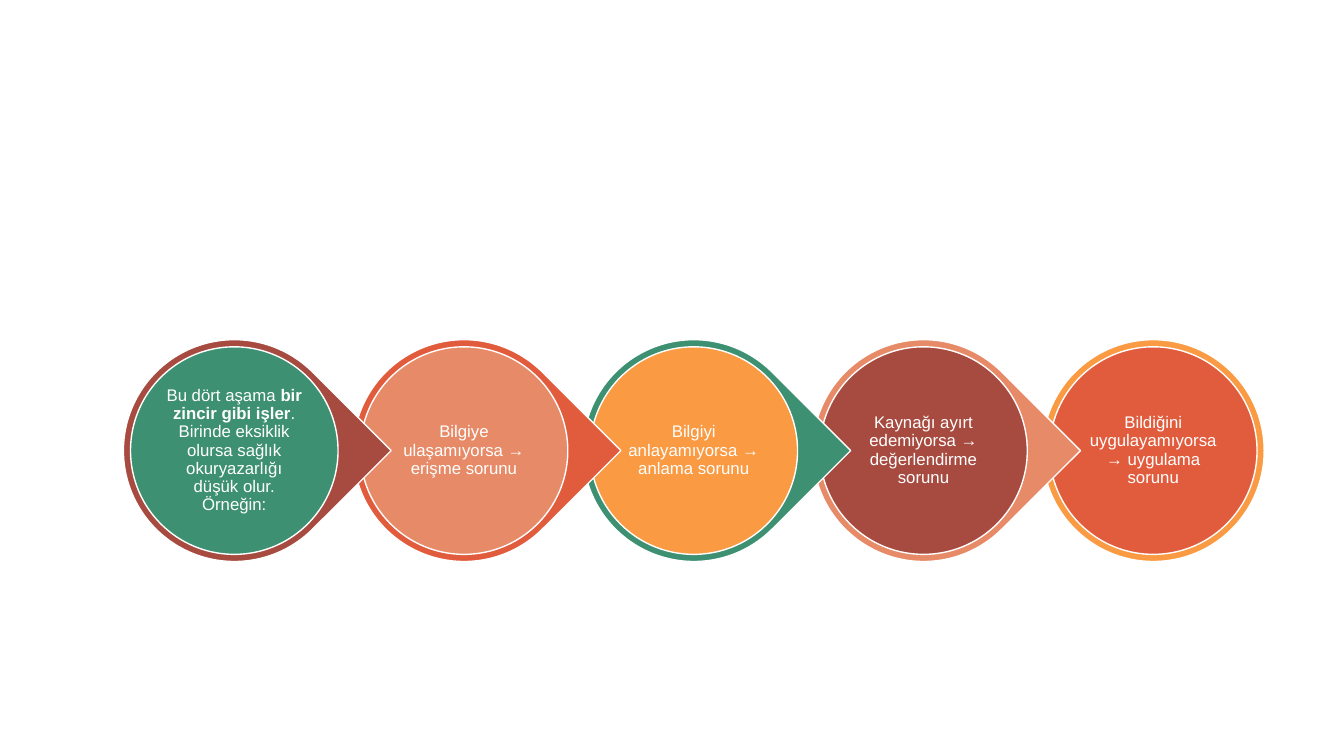
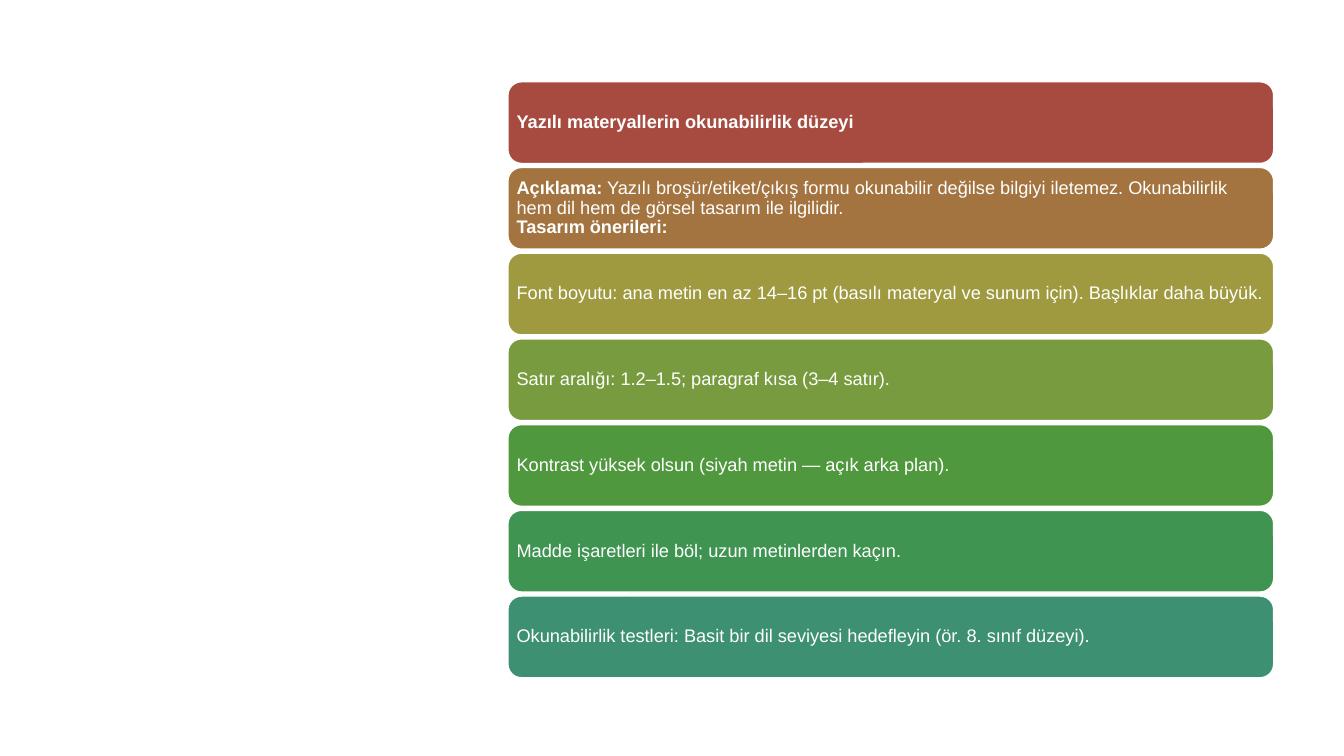
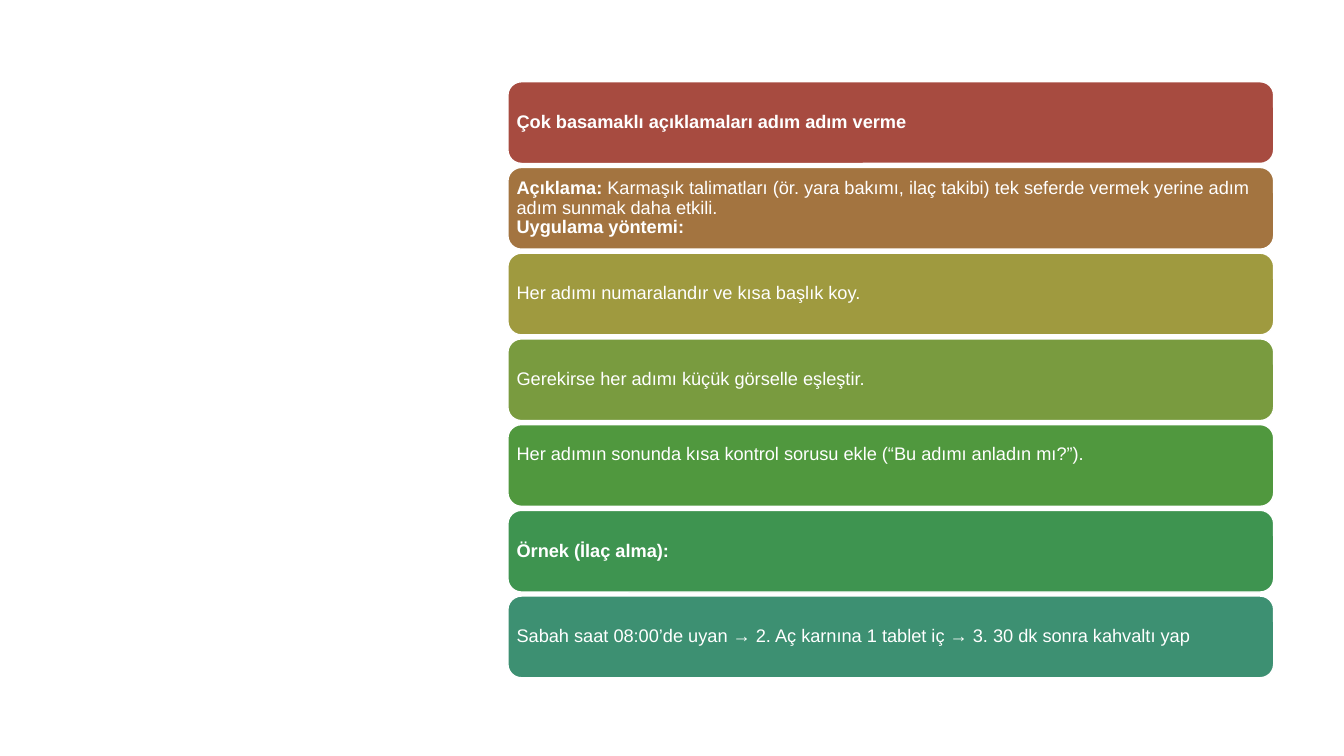
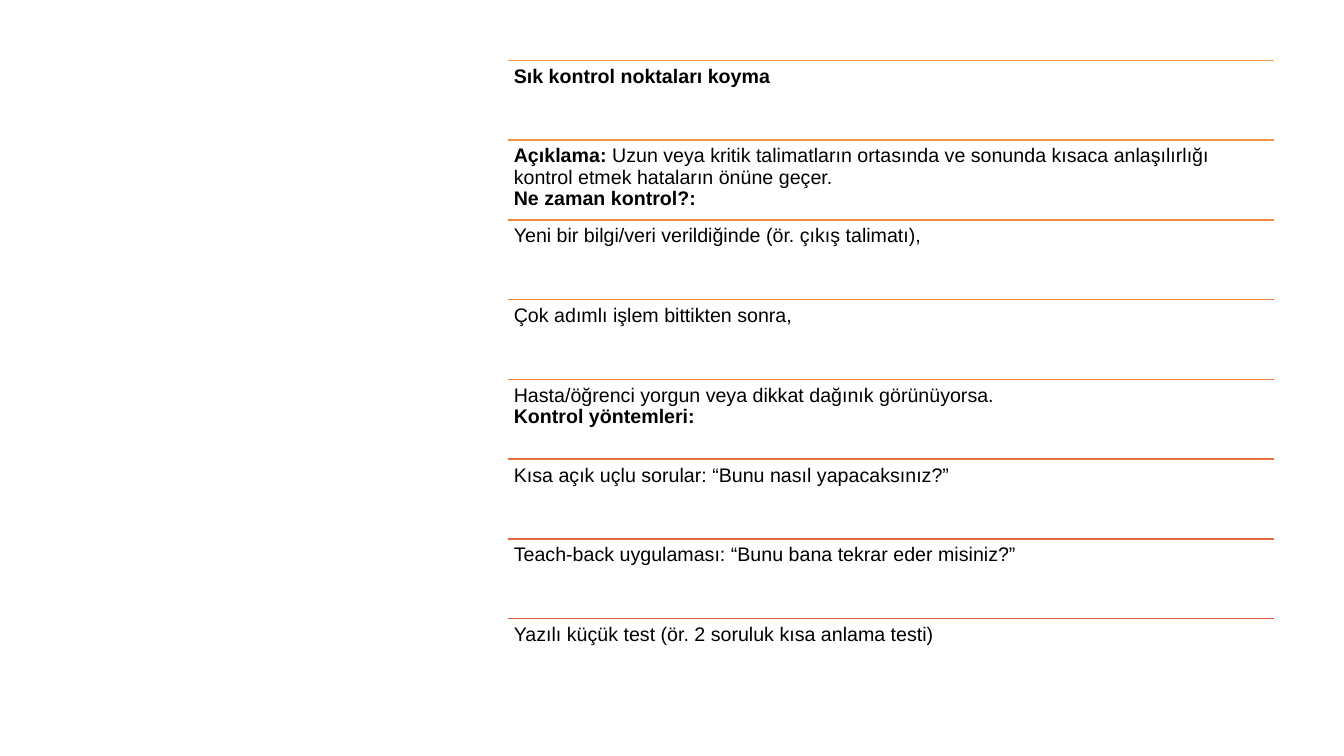
from collections import namedtuple

from lxml.etree import SubElement
from pptx import Presentation
from pptx.dml.color import RGBColor
from pptx.enum.shapes import MSO_CONNECTOR, MSO_SHAPE
from pptx.enum.text import MSO_ANCHOR, PP_ALIGN
from pptx.oxml.ns import qn
from pptx.util import Cm, Pt

FONT = "Arial"
WHITE = RGBColor(0xFF, 0xFF, 0xFF)
BLACK = RGBColor(0x00, 0x00, 0x00)
BRICK = RGBColor(0xA7, 0x4B, 0x40)
TEAL = RGBColor(0x3D, 0x90, 0x72)
ORANGE = RGBColor(0xFA, 0x9A, 0x42)
RED = RGBColor(0xE1, 0x5C, 0x3D)
SALMON = RGBColor(0xE7, 0x8A, 0x67)
BROWN = RGBColor(0xA3, 0x74, 0x40)
OLIVE = RGBColor(0x9F, 0x9A, 0x3F)
MOSS = RGBColor(0x79, 0x9B, 0x3F)
GRASS = RGBColor(0x50, 0x98, 0x3E)
GREEN = RGBColor(0x3E, 0x94, 0x50)
BAR_COLORS = [BRICK, BROWN, OLIVE, MOSS, GRASS, GREEN, TEAL]

Box = namedtuple("Box", "left top width height")
CHAIN_BOX = Box(Cm(3.11), Cm(8.56), Cm(28.75), Cm(5.59))
BARS_BOX = Box(Cm(12.8), Cm(2.06), Cm(19.3), Cm(15.02))
RULED_BOX = Box(Cm(12.8), Cm(1.52), Cm(19.3), Cm(16.08))

CHAIN = [
    ("Bu dört aşama **bir zincir gibi işler**.\n"
     "Birinde eksiklik olursa sağlık okuryazarlığı düşük olur.\nÖrneğin:", BRICK, TEAL),
    ("Bilgiye ulaşamıyorsa → erişme sorunu", RED, SALMON),
    ("Bilgiyi anlayamıyorsa → anlama sorunu", TEAL, ORANGE),
    ("Kaynağı ayırt edemiyorsa → değerlendirme sorunu", SALMON, BRICK),
    ("Bildiğini uygulayamıyorsa → uygulama sorunu", ORANGE, RED),
]
READABILITY = [
    "**Yazılı materyallerin okunabilirlik düzeyi**",
    "**Açıklama:** Yazılı broşür/etiket/çıkış formu okunabilir değilse bilgiyi iletemez. "
    "Okunabilirlik hem dil hem de görsel tasarım ile ilgilidir.\n**Tasarım önerileri:**",
    "Font boyutu: ana metin en az 14–16 pt (basılı materyal ve sunum için). Başlıklar daha büyük.",
    "Satır aralığı: 1.2–1.5; paragraf kısa (3–4 satır).",
    "Kontrast yüksek olsun (siyah metin — açık arka plan).",
    "Madde işaretleri ile böl; uzun metinlerden kaçın.",
    "Okunabilirlik testleri: Basit bir dil seviyesi hedefleyin (ör. 8. sınıf düzeyi).",
]
STEP_BY_STEP = [
    "**Çok basamaklı açıklamaları adım adım verme**",
    "**Açıklama:** Karmaşık talimatları (ör. yara bakımı, ilaç takibi) tek seferde vermek "
    "yerine adım adım sunmak daha etkili.\n**Uygulama yöntemi:**",
    "Her adımı numaralandır ve kısa başlık koy.",
    "Gerekirse her adımı küçük görselle eşleştir.",
    "Her adımın sonunda kısa kontrol sorusu ekle (“Bu adımı anladın mı?”).",
    "**Örnek (İlaç alma):**",
    "Sabah saat 08:00’de uyan → 2. Aç karnına 1 tablet iç → 3. 30 dk sonra kahvaltı yap",
]
RAISED_STEP = 4
CHECKPOINTS = [
    "**Sık kontrol noktaları koyma**",
    "**Açıklama:** Uzun veya kritik talimatların ortasında ve sonunda kısaca anlaşılırlığı "
    "kontrol etmek hataların önüne geçer.\n**Ne zaman kontrol?:**",
    "Yeni bir bilgi/veri verildiğinde (ör. çıkış talimatı),",
    "Çok adımlı işlem bittikten sonra,",
    "Hasta/öğrenci yorgun veya dikkat dağınık görünüyorsa.\n**Kontrol yöntemleri:**",
    "Kısa açık uçlu sorular: “Bunu nasıl yapacaksınız?”",
    "Teach-back uygulaması: “Bunu bana tekrar eder misiniz?”",
    "Yazılı küçük test (ör. 2 soruluk kısa anlama testi)",
]


def write(frame, text, size, color, inset, align=PP_ALIGN.LEFT, anchor=MSO_ANCHOR.MIDDLE):
    frame.word_wrap = True
    frame.vertical_anchor = anchor
    frame.margin_left = frame.margin_right = frame.margin_top = frame.margin_bottom = inset
    lines = text.split("\n")
    frame.text = "\n".join([""] * len(lines))
    for paragraph, line in zip(frame.paragraphs, lines):
        paragraph.alignment = align
        paragraph.line_spacing = 0.9
        for index, piece in enumerate(line.split("**")):
            if piece:
                run = paragraph.add_run()
                run.text = piece
                run.font.name = FONT
                run.font.size = Pt(size)
                run.font.bold = index % 2 == 1
                run.font.color.rgb = color


def add_filled(slide, preset, box, color):
    shape = slide.shapes.add_shape(preset, *box)
    shape.shadow.inherit = False
    shape.fill.solid()
    shape.fill.fore_color.rgb = color
    shape.line.color.rgb = WHITE
    shape.line.width = Pt(1)
    return shape


def add_chain(slide, box, links):
    size = box.height
    pitch = (box.width - size) / (len(links) - 1)
    rim = Cm(0.18)
    for index, (text, rim_color, disc_color) in reversed(list(enumerate(links))):
        left = round(box.left + index * pitch)
        is_last = index == len(links) - 1
        preset = MSO_SHAPE.OVAL if is_last else MSO_SHAPE.TEAR
        pointer = add_filled(slide, preset, Box(left, box.top, size, size), rim_color)
        if not is_last:
            pointer.rotation = 45
        disc_box = Box(left + rim, box.top + rim, size - 2 * rim, size - 2 * rim)
        disc = add_filled(slide, MSO_SHAPE.OVAL, disc_box, disc_color)
        write(disc.text_frame, text, 12, WHITE, Cm(0.04), PP_ALIGN.CENTER)


def add_bars(slide, box, texts):
    gap = Cm(0.1)
    height = round((box.height - gap * (len(texts) - 1)) / len(texts))
    bars = []
    for index, (text, color) in enumerate(zip(texts, BAR_COLORS)):
        top = box.top + index * (height + gap)
        bar = add_filled(slide, MSO_SHAPE.ROUNDED_RECTANGLE,
                         Box(box.left, top, box.width, height), color)
        write(bar.text_frame, text, 13, WHITE, Cm(0.12))
        bars.append(bar)
    return bars


def blend(start, end, share):
    return RGBColor(*(round(a + (b - a) * share) for a, b in zip(start, end)))


def add_ruled_list(slide, box, texts):
    height = round(box.height / len(texts))
    for index, text in enumerate(texts):
        top = box.top + index * height
        rule = slide.shapes.add_connector(
            MSO_CONNECTOR.STRAIGHT, box.left, top, box.left + box.width, top)
        rule.line.color.rgb = blend(ORANGE, RED, index / (len(texts) - 1))
        rule.line.width = Pt(1)
        SubElement(rule.element.spPr, qn("a:effectLst"))
        entry = slide.shapes.add_textbox(box.left, top, box.width, height)
        write(entry.text_frame, text, 14, BLACK, Cm(0.15), anchor=MSO_ANCHOR.TOP)


def main():
    presentation = Presentation()
    presentation.slide_width = Cm(33.87)
    presentation.slide_height = Cm(19.05)
    blank = presentation.slide_layouts[6]
    chain, readability, steps, checkpoints = (
        presentation.slides.add_slide(blank) for _ in range(4))
    add_chain(chain, CHAIN_BOX, CHAIN)
    add_bars(readability, BARS_BOX, READABILITY)
    step_bars = add_bars(steps, BARS_BOX, STEP_BY_STEP)
    step_bars[RAISED_STEP].text_frame.margin_bottom = Cm(0.67)
    add_ruled_list(checkpoints, RULED_BOX, CHECKPOINTS)
    presentation.save("out.pptx")


if __name__ == "__main__":
    main()
